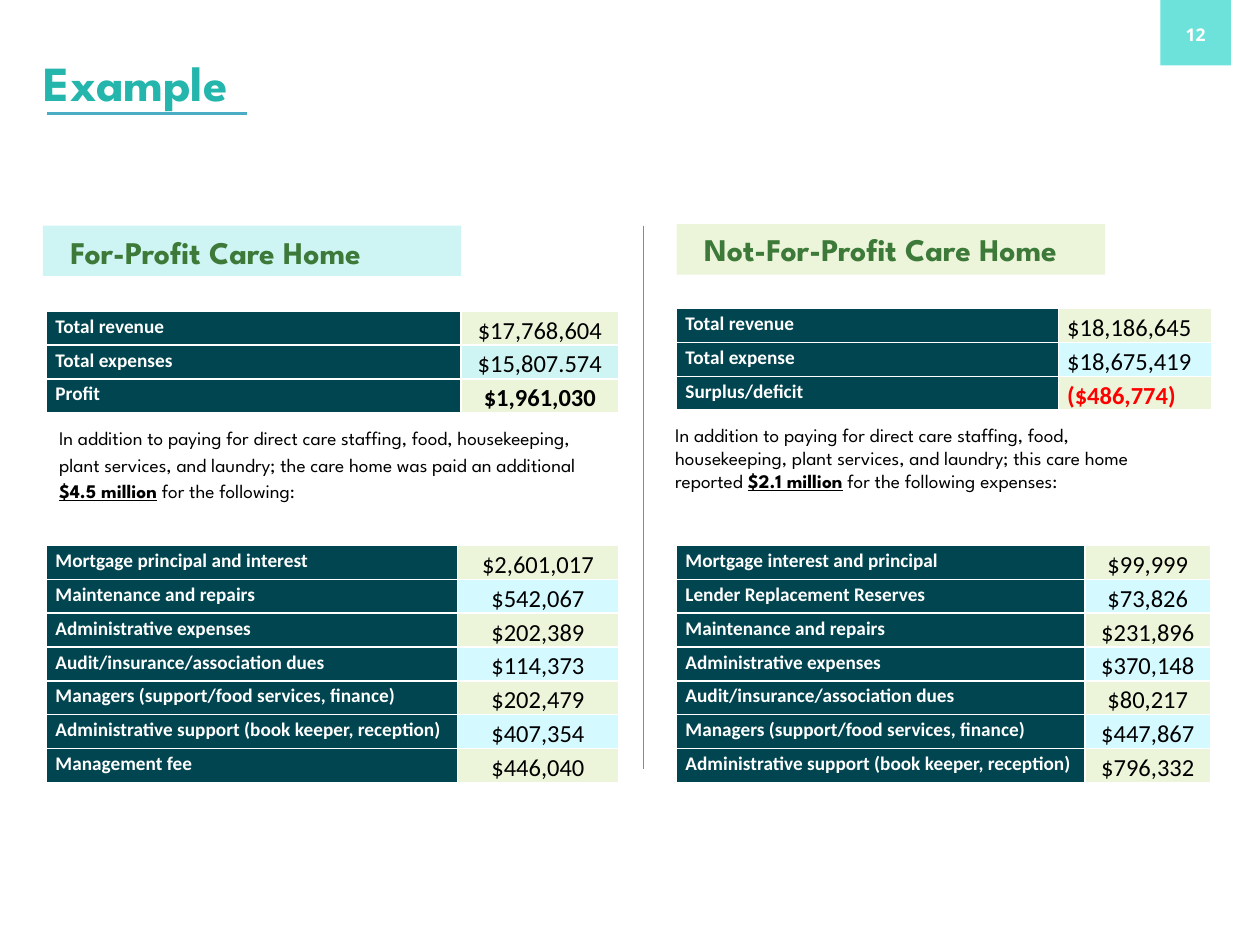
"""Build a slide comparing the finances of a for-profit and a not-for-profit care home."""
from lxml.etree import SubElement
from pptx import Presentation
from pptx.dml.color import RGBColor as Color
from pptx.enum.shapes import MSO_CONNECTOR as Connector, MSO_SHAPE as Shape
from pptx.enum.text import MSO_ANCHOR as Anchor, PP_ALIGN as Align
from pptx.oxml import parse_xml
from pptx.oxml.ns import nsdecls, qn
from pptx.util import Inches, Pt

COLORS = {
    "teal": "24B5AC", "aqua": "6CE2DB", "blue": "4BACC6", "dark": "00454F",
    "lime": "ECF5D9", "mint": "CEF5F3", "sky": "D4FAFF", "green": "3D7A3A",
    "white": "FFFFFF", "black": "000000", "red": "FF0000",
}
HEADING_FONT = "League Spartan"

presentation = Presentation()
presentation.slide_width, presentation.slide_height = Inches(10), Inches(7.5)
slide = presentation.slides.add_slide(presentation.slide_layouts[6])
column = presentation.slide_width / 100
row = presentation.slide_height / 75


def place(left, top, width, height):
    return int(left * column), int(top * row), int(width * column), int(height * row)


def write(frame, text, size=11, font="Calibri", color="black", bold=False,
          align=Align.LEFT, spacing=None, after=None, strong=""):
    paragraph = frame.paragraphs[0]
    paragraph.alignment = align
    paragraph.line_spacing = spacing
    paragraph.space_after = after
    before, mark, rest = text.partition(strong) if strong else (text, "", "")
    for part, emphasis in ((before, False), (mark, True), (rest, False)):
        if part:
            run = paragraph.add_run()
            run.text = part
            run.font.size = Pt(size)
            run.font.name = font
            run.font.bold = bold or emphasis
            run.font.underline = emphasis
            run.font.color.rgb = Color.from_string(COLORS[color])


panels = {}
for name, area, fill in (
    ("page", (92.1, -1.9, 5.6, 7.1), "aqua"),
    ("not for profit", (53.7, 17.8, 34, 4), "lime"),
    ("for profit", (3.4, 17.9, 33.2, 4), "mint"),
):
    panel = slide.shapes.add_shape(Shape.RECTANGLE, *place(*area))
    panel.shadow.inherit = False
    panel.fill.solid()
    panel.fill.fore_color.rgb = Color.from_string(COLORS[fill])
    panel.line.fill.background()
    panels[name] = panel

page_frame = panels["page"].text_frame
page_frame.vertical_anchor = Anchor.BOTTOM
page_frame.margin_bottom = int(1.6 * row)
write(page_frame, "12", size=10, font="Open Sans", color="white", bold=True, align=Align.CENTER)

heading = dict(font=HEADING_FONT, bold=True)
body = dict(font=HEADING_FONT)
for area, text, style in (
    ((2.5, 3.7, 80.7, 5.6), "Example", dict(heading, size=28, color="teal")),
    ((4.6, 18, 32, 4), "For-Profit Care Home", dict(heading, size=18, color="green")),
    ((54.9, 17.8, 34, 4), "Not-For-Profit Care Home", dict(heading, size=18, color="green")),
    ((3.7, 33.1, 45.9, 7.2),
     "In addition to paying for direct care staffing, food, housekeeping, plant services, "
     "and laundry; the care home was paid an additional $4.5 million for the following:",
     dict(body, spacing=1.15, after=Pt(8), strong="$4.5 million")),
    ((52.6, 33.1, 42.5, 6.6),
     "In addition to paying for direct care staffing, food, housekeeping, plant services, "
     "and laundry; this care home reported $2.1 million for the following expenses:",
     dict(body, strong="$2.1 million")),
):
    frame = slide.shapes.add_textbox(*place(*area)).text_frame
    frame.word_wrap = True
    frame.vertical_anchor = Anchor.MIDDLE if text == "Example" else Anchor.TOP
    write(frame, text, **style)

profit_summary = [("Total revenue", "$17,768,604"), ("Total expenses", "$15,807.574"),
                  ("Profit", "$1,961,030")]
nonprofit_summary = [("Total revenue", "$18,186,645"), ("Total expense", "$18,675,419"),
                     ("Surplus/deficit", "($486,774)")]
profit_costs = [
    ("Mortgage principal and interest", "$2,601,017"),
    ("Maintenance and repairs", "$542,067"),
    ("Administrative expenses", "$202,389"),
    ("Audit/insurance/association dues", "$114,373"),
    ("Managers (support/food services, finance)", "$202,479"),
    ("Administrative support (book keeper, reception)", "$407,354"),
    ("Management fee", "$446,040"),
]
nonprofit_costs = [
    ("Mortgage interest and principal", "$99,999"),
    ("Lender Replacement Reserves", "$73,826"),
    ("Maintenance and repairs", "$231,896"),
    ("Administrative expenses", "$370,148"),
    ("Audit/insurance/association dues", "$80,217"),
    ("Managers (support/food services, finance)", "$447,867"),
    ("Administrative support (book keeper, reception)", "$796,332"),
]
for left, top, widths, entries, band, align, anchor in (
    (3.7, 24.7, (32.9, 12.5), profit_summary, "mint", Align.CENTER, Anchor.TOP),
    (53.7, 24.5, (30.3, 12.2), nonprofit_summary, "sky", Align.LEFT, Anchor.TOP),
    (3.7, 43.3, (32.6, 12.8), profit_costs, "sky", Align.CENTER, Anchor.MIDDLE),
    (53.7, 43.3, (32.4, 10), nonprofit_costs, "sky", Align.CENTER, Anchor.MIDDLE),
):
    area = place(left, top, sum(widths), 2.53 * len(entries))
    table = slide.shapes.add_table(len(entries), 2, *area).table
    table.first_row = table.horz_banding = False
    for table_column, width in zip(table.columns, widths):
        table_column.width = int(width * column)
    for index, (label, amount) in enumerate(entries):
        amount_color = "red" if amount.startswith("(") else "black"
        amount_bold = label in ("Profit", "Surplus/deficit")
        label_style = dict(color="white", bold=True)
        amount_style = dict(size=14, color=amount_color, bold=amount_bold, align=align)
        for position, (text, fill, style, cell_anchor) in enumerate((
            (label, "dark", label_style, Anchor.TOP),
            (amount, band if index % 2 else "lime", amount_style, anchor),
        )):
            cell = table.cell(index, position)
            cell.margin_left = cell.margin_right = Inches(0.07)
            cell.margin_top = cell.margin_bottom = 0
            cell.vertical_anchor = cell_anchor
            cell.fill.solid()
            cell.fill.fore_color.rgb = Color.from_string(COLORS[fill])
            write(cell.text_frame, text, spacing=1.15, **style)
            properties = cell._tc.get_or_add_tcPr()
            for order, side in enumerate("LRTB"):
                properties.insert(order, parse_xml(
                    f'<a:ln{side} {nsdecls("a")} w="{Pt(1)}"><a:solidFill>'
                    f'<a:srgbClr val="{COLORS["white"]}"/></a:solidFill></a:ln{side}>'))

for start, end, color, width in (
    ((19.6, 9), (3.7, 9), "blue", 2),
    ((51.1, 17.9), (51.1, 61), "teal", 0.5),
):
    line = slide.shapes.add_connector(Connector.STRAIGHT, *place(*start, *end))
    line.line.color.rgb = Color.from_string(COLORS[color])
    line.line.width = Pt(width)
    SubElement(line._element.spPr, qn("a:effectLst"))

presentation.save("out.pptx")
